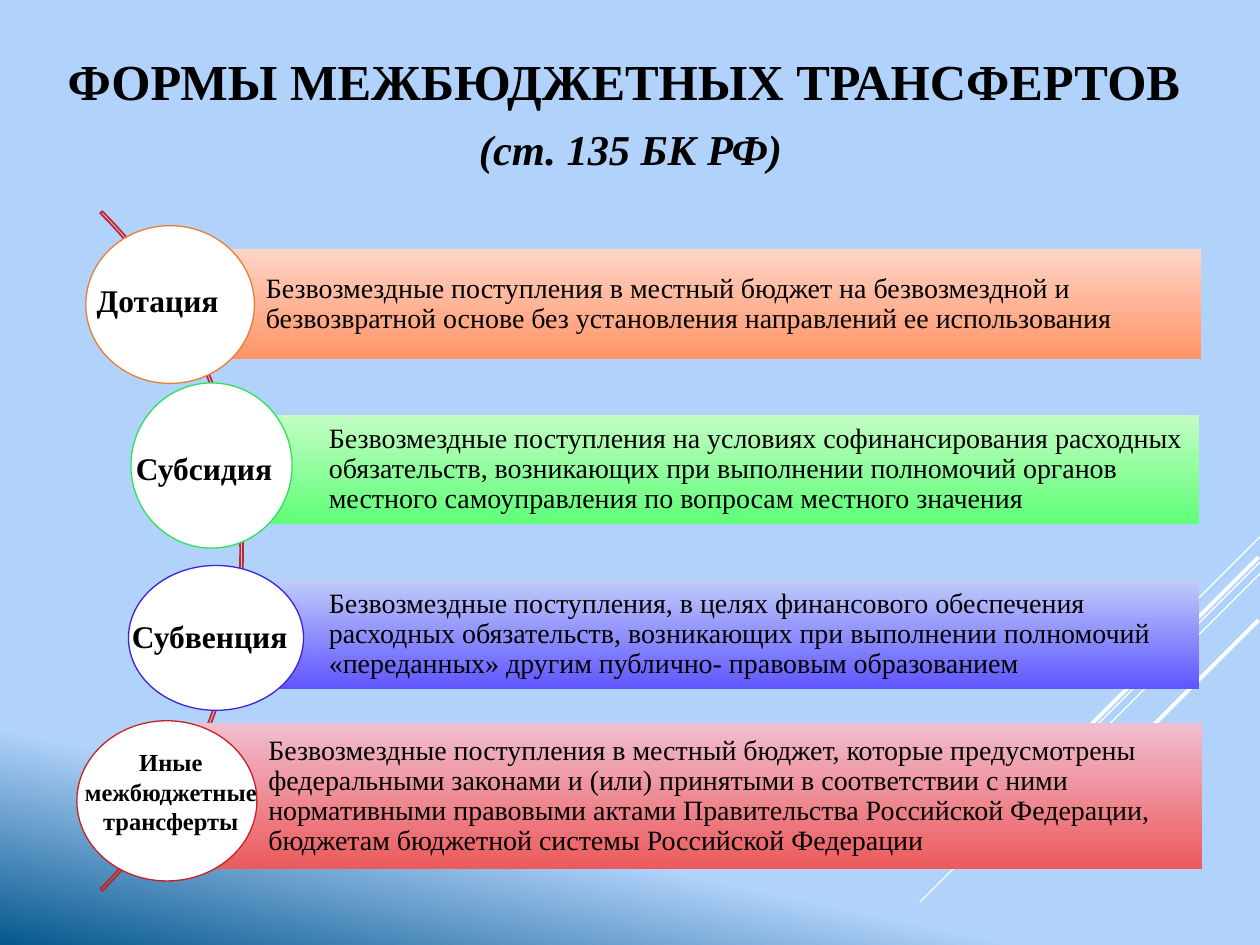
from lxml import etree
from pptx import Presentation
from pptx import util as u
from pptx.dml.color import RGBColor
from pptx.enum import shapes, text
from pptx.oxml.ns import qn

FONT = "Times New Roman"
BLACK = RGBColor(0x00, 0x00, 0x00)
WHITE = RGBColor(0xFF, 0xFF, 0xFF)
SKY = RGBColor(0xB1, 0xD3, 0xFB)
NAVY = RGBColor(0x06, 0x58, 0x8E)
ORANGE = RGBColor(0xE8, 0x7D, 0x37)
PEACH = RGBColor(0xFF, 0xD4, 0xC6)
CORAL = RGBColor(0xFF, 0x94, 0x67)
GREEN = RGBColor(0x2B, 0xE2, 0x5B)
MINT = RGBColor(0xC3, 0xFD, 0xC3)
LIME = RGBColor(0x5F, 0xFF, 0x78)
BLUE = RGBColor(0x39, 0x22, 0xD9)
LAVENDER = RGBColor(0xC0, 0xCC, 0xF9)
VIOLET = RGBColor(0x5F, 0x56, 0xFF)
RED = RGBColor(0xC6, 0x23, 0x24)
PINK = RGBColor(0xF0, 0xBE, 0xD0)
SCARLET = RGBColor(0xEC, 0x5A, 0x5B)

STROKES = [(0, 0, 2.11, 0.75), (0, 0.51, 6.86, 0.75), (0, 0.74, 4.37, 0.75),
           (0.03, 0.41, 3.99, 2.25), (0.03, 1.68, 2.9, 2.25)]

ROWS = [
    dict(box=(3.61, 5.03, 20.6, 2.21), oval=(-1.88, -0.48, 3.4, 3.18),
         label=(-1.91, 0.51, 3.2, 1.02), colors=(PEACH, CORAL, ORANGE),
         name="Дотация",
         body="Безвозмездные поступления в местный бюджет на безвозмездной и "
              "безвозвратной основе без установления направлений ее использования"),
    dict(box=(4.88, 8.36, 19.3, 2.21), oval=(-2.24, -0.64, 3.25, 3.33),
         label=(-2.39, 0.56, 3.3, 1.02), colors=(MINT, LIME, GREEN),
         name="Субсидия",
         body="Безвозмездные поступления на условиях софинансирования расходных "
              "обязательств, возникающих при выполнении полномочий органов местного "
              "самоуправления по вопросам местного значения"),
    dict(box=(4.88, 11.68, 19.3, 2.21), oval=(-2.29, -0.28, 3.53, 2.92),
         label=(-2.47, 0.64, 3.81, 1.02), colors=(LAVENDER, VIOLET, BLUE),
         name="Субвенция",
         body="Безвозмездные поступления, в целях финансового обеспечения расходных "
              "обязательств, возникающих при выполнении полномочий «переданных» "
              "другим публично- правовым образованием"),
    dict(box=(3.66, 14.58, 20.57, 2.95), oval=(-2.11, -0.05, 3.63, 3.23),
         label=(-2.26, 0.36, 4.09, 2.06), colors=(PINK, SCARLET, RED),
         name="Иные межбюджетные трансферты", size=14, align=text.PP_ALIGN.CENTER,
         body="Безвозмездные поступления в местный бюджет, которые предусмотрены "
              "федеральными законами и (или) принятыми в соответствии с ними "
              "нормативными правовыми актами Правительства Российской Федерации, "
              "бюджетам бюджетной системы Российской Федерации"),
]


def cm(*values):
    """Convert numbers to centimetre lengths."""
    return [u.Cm(v) for v in values]


def add_text(p, content, size=16, bold=False, italic=False, align=text.PP_ALIGN.LEFT, spacing=1.0):
    """Append a formatted run to a paragraph."""
    p.alignment = align
    p.line_spacing = spacing
    r = p.add_run()
    r.text = content
    r.font.name, r.font.size = FONT, u.Pt(size)
    r.font.bold, r.font.italic = bold, italic
    r.font.color.rgb = BLACK


def set_gradient(fill, stops, angle):
    """Apply a two-stop linear gradient with a clockwise angle."""
    fill.gradient()
    fill.gradient_angle = 360 - angle
    for stop, (position, color) in zip(fill.gradient_stops, stops):
        stop.position = position
        stop.color.rgb = color


def add_shape(s, kind, box, line=None, width=0.75):
    """Add a shadowless preset shape, outlined only if a colour is given."""
    sp = s.shapes.add_shape(kind, *cm(*box))
    sp.shadow.inherit = False
    if line is None:
        sp.line.fill.background()
    else:
        sp.line.color.rgb = line
        sp.line.width = u.Pt(width)
    return sp


def add_strokes(s, box):
    """Draw the white diagonal strokes from the right edge of the box."""
    left, top, width, _ = box
    for dx, dy, length, weight in STROKES:
        x, y = left + width - dx, top + dy
        c = s.shapes.add_connector(shapes.MSO_CONNECTOR.STRAIGHT, *cm(x, y, x - length, y + length))
        c.line.color.rgb = WHITE
        c.line.width = u.Pt(weight)
        etree.SubElement(c._element.spPr, qn("a:effectLst"))


def add_arc(s, box):
    """Draw the thin arc that links the ovals."""
    sp = add_shape(s, shapes.MSO_SHAPE.BLOCK_ARC, box, RED, 1)
    sp.fill.background()
    for i, value in enumerate((189, 27, 0.003)):
        sp.adjustments[i] = value


def add_title(s, box):
    """Place and format the title with its subtitle line."""
    sp = s.shapes.title
    sp.left, sp.top, sp.width, sp.height = cm(*box)
    tf = sp.text_frame
    tf.word_wrap = True
    tf.auto_size = text.MSO_AUTO_SIZE.NONE
    tf.vertical_anchor = text.MSO_ANCHOR.MIDDLE
    p = tf.paragraphs[0]
    style = dict(bold=True, align=text.PP_ALIGN.CENTER, spacing=1.08)
    add_text(p, "ФОРМЫ МЕЖБЮДЖЕТНЫХ ТРАНСФЕРТОВ", size=28.8, **style)
    p.add_line_break()
    add_text(p, " ", size=28.8, **style)
    add_text(p, "(ст. 135 БК РФ)", size=24.3, italic=True, **style)


def add_row(s, box, oval, label, colors, name, body, size=18, align=text.PP_ALIGN.LEFT):
    """Draw one transfer type: gradient bar, oval and its label."""
    left, top = box[:2]
    start, end, outline = colors

    bar = add_shape(s, shapes.MSO_SHAPE.RECTANGLE, box)
    set_gradient(bar.fill, [(0, start), (1, end)], 90)
    tf = bar.text_frame
    tf.word_wrap = True
    tf.vertical_anchor = text.MSO_ANCHOR.MIDDLE
    tf.margin_left, tf.margin_top, tf.margin_right, tf.margin_bottom = cm(1.75, 0.1, 0.1, 0.1)
    add_text(tf.paragraphs[0], body, spacing=0.9)

    dx, dy, w, h = oval
    sp = add_shape(s, shapes.MSO_SHAPE.OVAL, (left + dx, top + dy, w, h), outline)
    sp.fill.solid()
    sp.fill.fore_color.rgb = WHITE

    dx, dy, w, h = label
    tf = s.shapes.add_textbox(*cm(left + dx, top + dy, w, h)).text_frame
    tf.word_wrap = True
    add_text(tf.paragraphs[0], name, size=size, bold=True, align=align)


def main():
    """Build and save the slide."""
    prs = Presentation()
    prs.slide_width, prs.slide_height = cm(25.4, 19.05)
    s = prs.slides.add_slide(prs.slide_layouts[5])
    set_gradient(s.background.fill, [(0.82, SKY), (1, NAVY)], 102)
    add_title(s, (0.89, 0.53, 23.39, 3.4))
    add_strokes(s, (18.54, 10.82, 6.86, 7.39))
    add_arc(s, (-14.48, 1.42, 19.38, 19.38))
    for row in ROWS:
        add_row(s, **row)
    prs.save("out.pptx")


if __name__ == "__main__":
    main()
